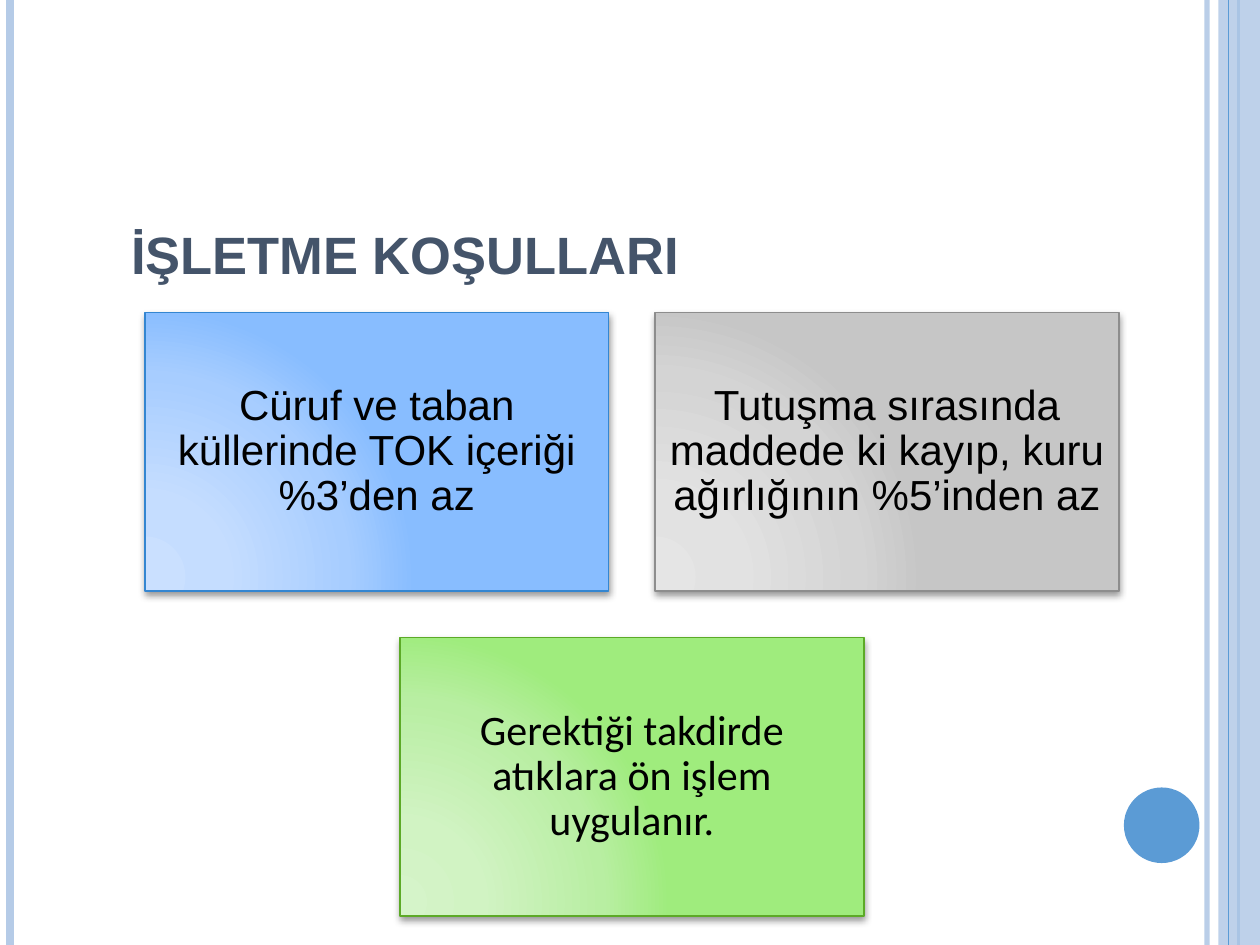
from dataclasses import dataclass

from lxml import etree
from pptx import Presentation
from pptx.dml.color import RGBColor
from pptx.enum.shapes import MSO_CONNECTOR as Connector, MSO_SHAPE as Shape
from pptx.enum.text import MSO_ANCHOR as Anchor, PP_ALIGN as Align
from pptx.oxml import parse_xml
from pptx.oxml.ns import nsdecls, qn
from pptx.util import Inches, Pt


@dataclass(frozen=True)
class Theme:
    pale: str = "B5CBE7"
    accent: str = "5B9BD5"
    heading: str = "44546A"
    text: str = "000000"
    title_size: int = 30
    body_size: int = 24
    title_font: str = "Arial"
    # Each tone: gradient stops at 0, 30, 75 and 100 %, then the outline
    blue: tuple = (("CAE0FF", "C5DDFF", "A7CDFF", "88BDFF"), "3486D1")
    grey: tuple = (("E5E5E5", "E2E2E2", "D4D4D4", "C6C6C6"), "8D8D8D")
    green: tuple = (("D5F4C9", "D1F3C3", "B8EEA2", "9FEC7D"), "5CAA27")


CARD_SHADOW = f"""<a:outerShdw {nsdecls('a')} blurRad="50800" dist="25400"
 dir="5400000" rotWithShape="0"><a:srgbClr val="000000"><a:alpha val="40000"/>
</a:srgbClr></a:outerShdw>"""


def apply(target, formats):
    for name, value in formats.items():
        setattr(target, name, value)


def set_alpha(fill_holder, percent):
    color = next(fill_holder.iter(qn("a:srgbClr")))
    etree.SubElement(color, qn("a:alpha"), val=str(percent * 1000))


def corner_gradient(colors):
    stops = "".join(
        f'<a:gs pos="{position * 1000}"><a:srgbClr val="{color}"/></a:gs>'
        for position, color in zip((0, 30, 75, 100), colors))
    return parse_xml(
        f'<a:gradFill {nsdecls("a")} rotWithShape="1"><a:gsLst>{stops}</a:gsLst>'
        '<a:path path="circle"><a:fillToRect l="5000" t="100000" r="120000" b="10000"/>'
        '</a:path></a:gradFill>')


class SlideBuilder:
    def __init__(self, slide, theme):
        self.slide = slide
        self.theme = theme

    def set_text(self, frame, text, frame_format, font_format, color, **paragraph_format):
        apply(frame, frame_format)
        paragraph = frame.paragraphs[0]
        apply(paragraph, paragraph_format)
        run = paragraph.add_run()
        run.text = text
        apply(run.font, font_format)
        run.font.color.rgb = RGBColor.from_string(color)

    def title(self, text, left, top, width, height):
        heading = self.slide.shapes.title
        apply(heading, dict(left=Inches(left), top=Inches(top),
                            width=Inches(width), height=Inches(height)))
        self.set_text(heading.text_frame, text,
                      dict(vertical_anchor=Anchor.BOTTOM, word_wrap=True),
                      dict(name=self.theme.title_font, size=Pt(self.theme.title_size),
                           bold=True),
                      self.theme.heading, alignment=Align.LEFT)

    def vertical_rule(self, x, color, weight, alpha=None):
        rule = self.slide.shapes.add_connector(
            Connector.STRAIGHT, Inches(x), 0, Inches(x), Inches(7.5))
        rule.line.color.rgb = RGBColor.from_string(color)
        rule.line.width = Pt(weight)
        properties = rule._element.spPr
        etree.SubElement(properties, qn("a:effectLst"))
        if alpha:
            set_alpha(properties, alpha)

    def shape(self, kind, *box):
        item = self.slide.shapes.add_shape(kind, *map(Inches, box))
        item.shadow.inherit = False
        return item

    def plain(self, kind, color, *box, alpha=None):
        item = self.shape(kind, *box)
        item.fill.solid()
        item.fill.fore_color.rgb = RGBColor.from_string(color)
        item.line.fill.background()
        if alpha:
            set_alpha(item._element.spPr, alpha)

    def card(self, text, font, tone, *box):
        colors, outline = tone
        item = self.shape(Shape.RECTANGLE, *box)
        item.line.color.rgb = RGBColor.from_string(outline)
        item.line.width = Pt(1)
        item.fill.background()
        properties = item._element.spPr
        properties.replace(properties.find(qn("a:noFill")), corner_gradient(colors))
        properties.find(qn("a:effectLst")).append(parse_xml(CARD_SHADOW))
        margins = {f"margin_{side}": Inches(0.1) for side in ("left", "top", "right", "bottom")}
        self.set_text(item.text_frame, text,
                      dict(margins, vertical_anchor=Anchor.MIDDLE, word_wrap=True),
                      dict(name=font, size=Pt(self.theme.body_size)),
                      self.theme.text, alignment=Align.CENTER, line_spacing=0.9)


def main():
    deck = Presentation()
    apply(deck, dict(slide_width=Inches(10), slide_height=Inches(7.5)))
    theme = Theme()
    builder = SlideBuilder(deck.slides.add_slide(deck.slide_layouts[5]), theme)

    # Side bands and disc
    builder.vertical_rule(9.58, theme.pale, 3, alpha=93)
    builder.vertical_rule(0.08, theme.pale, 4.5)
    builder.vertical_rule(9.83, theme.accent, 1.5)
    builder.plain(Shape.RECTANGLE, theme.pale, 9.67, 0, 0.33, 7.5, alpha=87)
    builder.vertical_rule(9.75, theme.accent, 0.75)
    builder.plain(Shape.OVAL, theme.accent, 8.92, 6.25, 0.6, 0.6)

    # Title
    builder.title("İŞLETME KOŞULLARI", 0.94, 0.86, 8.62, 1.45)

    # Operating conditions: two cards above, one centred below
    left, top, width, height, gap = 1.15, 2.48, 3.68, 2.21, 0.37
    conditions = (
        ("Cüruf ve taban küllerinde TOK içeriği %3’den az", "Arial", theme.blue, 0, 0),
        ("Tutuşma sırasında maddede ki kayıp, kuru ağırlığının %5’inden az",
         "Arial", theme.grey, 1, 0),
        ("Gerektiği takdirde atıklara ön işlem uygulanır.", "Calibri", theme.green, 0.5, 1),
    )
    for text, font, tone, column, row in conditions:
        builder.card(text, font, tone, left + column * (width + gap),
                     top + row * (height + gap), width, height)

    deck.save("out.pptx")


if __name__ == "__main__":
    main()
